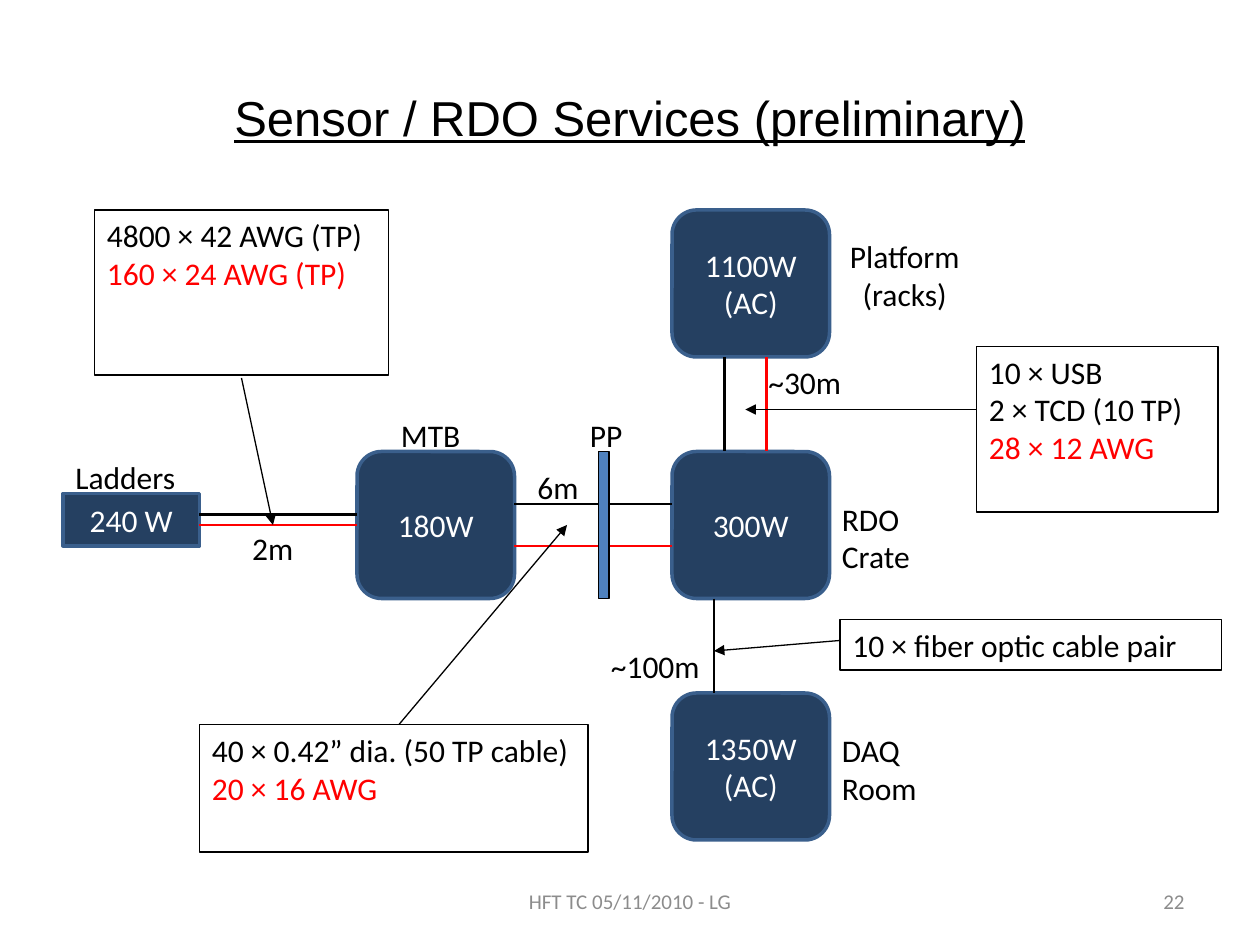
from lxml import etree
from pptx import Presentation
from pptx.dml.color import RGBColor
from pptx.enum.shapes import MSO_CONNECTOR, MSO_SHAPE
from pptx.enum.text import MSO_ANCHOR, PP_ALIGN
from pptx.oxml.ns import qn
from pptx.util import Pt

STRAIGHT = MSO_CONNECTOR.STRAIGHT
RECT, ROUND = MSO_SHAPE.RECTANGLE, MSO_SHAPE.ROUNDED_RECTANGLE
LEFT, CENTER, RIGHT = PP_ALIGN.LEFT, PP_ALIGN.CENTER, PP_ALIGN.RIGHT
TOP, MIDDLE = MSO_ANCHOR.TOP, MSO_ANCHOR.MIDDLE
BLACK = RGBColor(0x00, 0x00, 0x00)
WHITE = RGBColor(0xFF, 0xFF, 0xFF)
RED = RGBColor(0xFF, 0x00, 0x00)
NAVY = RGBColor(0x25, 0x40, 0x61)
EDGE = RGBColor(0x3A, 0x5F, 0x8C)
BLUE = RGBColor(0x4F, 0x81, 0xBD)
GRAY = RGBColor(0x8C, 0x8C, 0x8C)


def write(tf, lines, align=LEFT, anchor=TOP, wrap=True, **changes):
    tf.word_wrap = wrap
    tf.vertical_anchor = anchor
    for i, (text, color) in enumerate(lines):
        p = tf.add_paragraph() if i else tf.paragraphs[0]
        p.alignment = align
        r = p.add_run()
        r.text = text
        r.font.color.rgb = color
        for name, value in ({"name": "Calibri", "size": Pt(18)} | changes).items():
            setattr(r.font, name, value)


def connect(x1, y1, x2, y2, color, width):
    c = s.shapes.add_connector(STRAIGHT, Pt(x1), Pt(y1), Pt(x2), Pt(y2))
    c.line.color.rgb = color
    c.line.width = Pt(width)
    etree.SubElement(c._element.spPr, qn("a:effectLst"))
    return c


prs = Presentation()
prs.slide_width, prs.slide_height = Pt(720), Pt(540)
s = prs.slides.add_slide(prs.slide_layouts[5])

title = s.shapes.title
title.left, title.top, title.width, title.height = Pt(36), Pt(21.6), Pt(648), Pt(90)
write(title.text_frame, [("Sensor / RDO Services (preliminary)", BLACK)], CENTER, MIDDLE,
      name="Arial", size=Pt(28), underline=True)

boxes = [
    (RECT, 36, 282, 78, 30, "240 W"),
    (ROUND, 204, 258, 90, 84, "180W"),
    (ROUND, 384, 258, 90, 84, "300W"),
    (ROUND, 384, 396, 90, 84, "1350W (AC)"),
    (ROUND, 384, 120, 90, 84, "1100W (AC)"),
]
for kind, x, y, w, h, text in boxes:
    sp = s.shapes.add_shape(kind, Pt(x), Pt(y), Pt(w), Pt(h))
    sp.shadow.inherit = False
    sp.fill.solid()
    sp.fill.fore_color.rgb = NAVY
    sp.line.color.rgb = EDGE
    sp.line.width = Pt(2)
    write(sp.text_frame, [(text, WHITE)], CENTER, MIDDLE)

cables = [
    (114, 294, 204, 294, BLACK),
    (114, 300, 204, 300, RED),
    (294, 288, 384, 288, BLACK),
    (294, 312, 384, 312, RED),
    (414, 204, 414, 258, BLACK),
    (438, 204, 438, 258, RED),
    (408, 342, 408, 396, BLACK),
]
for x1, y1, x2, y2, color in cables:
    connect(x1, y1, x2, y2, color, 1.5)

panel = s.shapes.add_shape(RECT, Pt(342), Pt(258), Pt(6), Pt(84))
panel.shadow.inherit = False
panel.fill.solid()
panel.fill.fore_color.rgb = BLUE
panel.line.color.rgb = BLACK
panel.line.width = Pt(0.75)

labels = [
    (36, 258, 80, LEFT, ["Ladders"]),
    (222, 234, 52.5, LEFT, ["MTB"]),
    (330, 234, 39, LEFT, ["PP"]),
    (137, 299, 39.5, LEFT, ["2m"]),
    (300, 264, 39.5, LEFT, ["6m"]),
    (432, 204, 60.5, LEFT, ["~30m"]),
    (342, 366, 70.5, LEFT, ["~100m"]),
    (476, 132, 82, CENTER, ["Platform", "(racks)"]),
    (474, 282, 59, LEFT, ["RDO", "Crate"]),
    (474, 414, 72, LEFT, ["DAQ", "Room"]),
]
for x, y, w, align, lines in labels:
    tb = s.shapes.add_textbox(Pt(x), Pt(y), Pt(w), Pt(7 + 22 * len(lines)))
    write(tb.text_frame, [(text, BLACK) for text in lines], align, wrap=w == 72)

callouts = [
    (54, 120, 168, 94.5, [("4800 × 42 AWG (TP)", BLACK), ("160 × 24 AWG (TP)", RED)]),
    (114, 414, 222, 72.7, [("40 × 0.42” dia. (50 TP cable)", BLACK), ("20 × 16 AWG", RED)]),
    (480, 354, 218, 29, [("10 × fiber optic cable pair", BLACK)]),
    (558, 198, 138, 94.5, [("10 × USB", BLACK), ("2 × TCD (10 TP)", BLACK),
                           ("28 × 12 AWG", RED)]),
]
for x, y, w, h, lines in callouts:
    tb = s.shapes.add_textbox(Pt(x), Pt(y), Pt(w), Pt(h))
    tb.line.color.rgb = BLACK
    tb.line.width = Pt(1)
    write(tb.text_frame, lines)

arrows = [(138, 216, 156, 300), (228, 414, 324, 300), (480, 366, 408, 372), (558, 234, 426, 234)]
for ends in arrows:
    c = connect(*ends, BLACK, 0.75)
    etree.SubElement(c.line._get_or_add_ln(), qn("a:tailEnd"), type="triangle")

footers = [(246, 228, CENTER, "HFT TC 05/11/2010 - LG"), (516, 168, RIGHT, "22")]
for x, w, align, text in footers:
    tb = s.shapes.add_textbox(Pt(x), Pt(500.5), Pt(w), Pt(28.75))
    write(tb.text_frame, [(text, GRAY)], align, MIDDLE, size=Pt(12))

prs.save("out.pptx")
